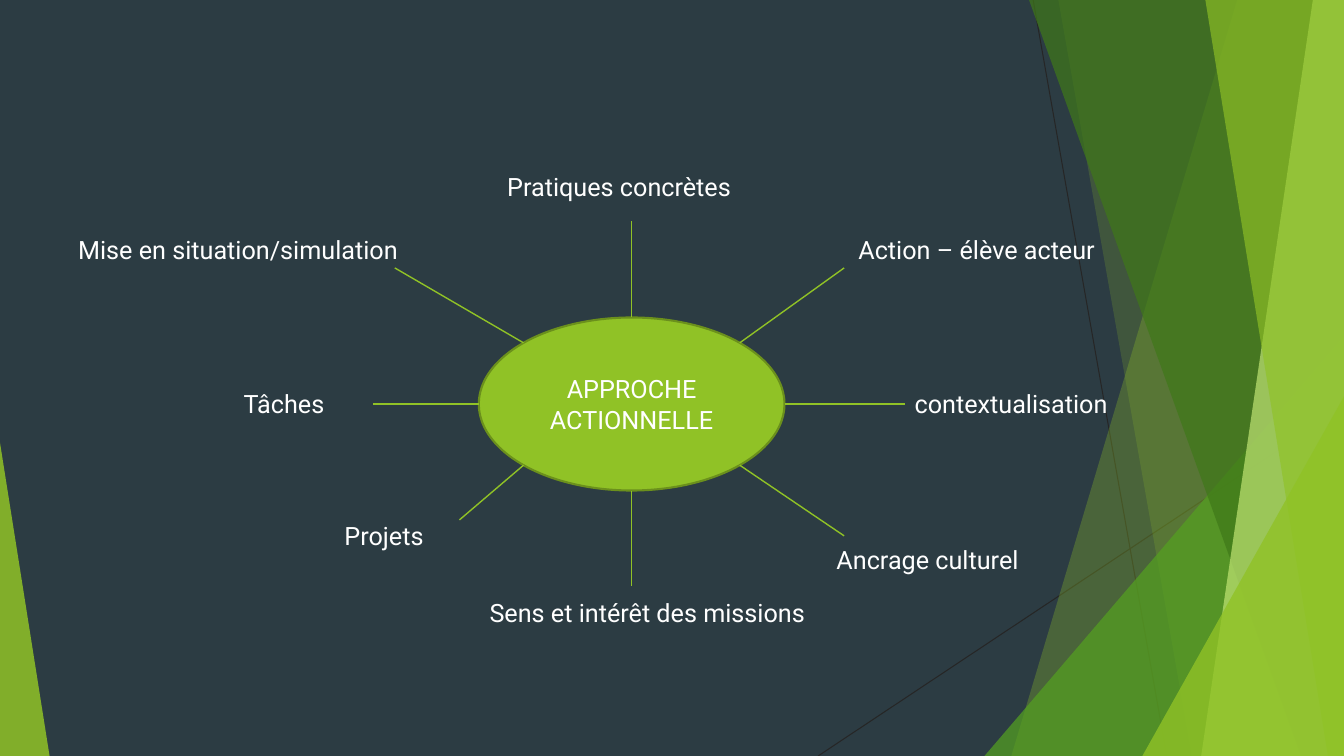
import math
from dataclasses import dataclass

import pptx
import pptx.util
import pptx.dml.color
import pptx.enum.shapes
import pptx.enum.text
import pptx.oxml
import pptx.oxml.ns

SHAPE = pptx.enum.shapes.MSO_SHAPE
COLS, ROWS = 16, 9
UNIT = pptx.util.Inches(13.333) / COLS


@dataclass(frozen=True)
class Theme:
    """Colours, font and sizes in points."""
    back: str = "2C3C43"
    ink: str = "FFFFFF"
    lime: str = "90C226"
    rim: str = "6B901C"
    leaf: str = "54A021"
    moss: str = "3F7819"
    pale: str = "C0E474"
    hair: str = "262626"
    font: str = "Roboto"
    size: float = 18
    thin: float = 0.75
    spoke: float = 1
    edge: float = 1.5


@dataclass(frozen=True)
class Box:
    """A region of the slide in columns and rows."""
    left: float
    top: float
    width: float
    height: float

    def spot(self, x, y):
        """Turn a point of the region into slide lengths."""
        return cells(self.left + x), cells(self.top + y)


THEME = Theme()

FACETS = [
    ("blade", 3.01, 0.32, THEME.lime, 30),
    ("blade", 0.88, 2.47, THEME.lime, 20),
    ("wedge", 0, 4, THEME.leaf, 72),
    ("blade", 0.53, 3.77, THEME.moss, 70),
    ("blade", 3.91, 2.58, THEME.pale, 70),
    ("blade", 2.63, 4.09, THEME.lime, 65),
    ("wedge", 1.88, 4.72, THEME.lime, 80),
]

TIPS = [(3.25, 0), (2.53, 1.57), (0, 2.17), (-2.05, 1.38),
        (-3.08, 0), (-2.82, -1.62), (0, -2.18), (2.53, -1.62)]

LABELS = [
    ("Pratiques concrètes", -1.6, -2.83, 3.22, 0),
    ("Action – élève acteur", 2.58, -2.08, 3.47, 0),
    ("Mise en situation/simulation", -7.08, -2.08, 4.86, 0.37),
    ("contextualisation", 3.25, -0.24, 3.42, 0),
    ("Ancrage culturel", 2.32, 1.61, 2.65, 0),
    ("Tâches", -5.7, -0.24, 2.39, 0.96),
    ("Projets", -4.64, 1.33, 2.63, 1.1),
    ("Sens et intérêt des missions", -1.81, 2.24, 4.85, 0),
]


def cells(count):
    """Turn grid cells into a slide length."""
    return pptx.util.Emu(round(count * UNIT))


def tone(code):
    """Make a colour from its code."""
    return pptx.dml.color.RGBColor.from_string(code)


def paint(shape, code, alpha=100):
    """Fill a shape without a line or shadow."""
    shape.shadow.inherit = False
    shape.fill.solid()
    shape.fill.fore_color.rgb = tone(code)
    shape.line.fill.background()
    if alpha < 100:
        tint = shape.fill._xPr.find(".//" + pptx.oxml.ns.qn("a:srgbClr"))
        node = pptx.oxml.parse_xml(
            f'<a:alpha {pptx.oxml.ns.nsdecls("a")} val="{alpha * 1000}"/>')
        tint.append(node)


def write(shape, text):
    """Put text into a shape in the theme's type."""
    frame = shape.text_frame
    frame.word_wrap = True
    frame.text = text
    font = frame.paragraphs[0].runs[0].font
    font.name = THEME.font
    font.size = pptx.util.Pt(THEME.size)
    font.color.rgb = tone(THEME.ink)
    return frame


def rule(slide, start, end, code, weight):
    """Draw a straight line between two points."""
    line = slide.shapes.add_connector(
        pptx.enum.shapes.MSO_CONNECTOR.STRAIGHT, *start, *end)
    line.line.color.rgb = tone(code)
    line.line.width = pptx.util.Pt(weight)
    line._element.spPr.append(pptx.oxml.parse_xml(
        f'<a:effectLst {pptx.oxml.ns.nsdecls("a")}/>'))


def blade(slide, box, head, foot):
    """Build a slanted panel that meets the right edge."""
    path = slide.shapes.build_freeform(*box.spot(head, 0), scale=1.0)
    path.add_line_segments([
        box.spot(box.width, 0), box.spot(box.width, box.height),
        box.spot(foot, box.height)], close=True)
    return path.convert_to_shape()


def wedge(slide, box, left, top, peak):
    """Add a triangle that fills the box's lower right part."""
    shape = slide.shapes.add_shape(
        SHAPE.ISOSCELES_TRIANGLE, *box.spot(left, top),
        cells(box.width - left), cells(box.height - top))
    shape.adjustments[0] = peak
    return shape


def decor(slide, box):
    """Draw the thin lines and facets of the right side."""
    for start, end in [((0.58, 0), (2.17, box.height)),
                       ((box.width, 4.84), (-1.98, box.height))]:
        rule(slide, box.spot(*start), box.spot(*end), THEME.hair, THEME.thin)
    for kind, one, two, code, alpha in FACETS:
        if kind == "blade":
            shape = blade(slide, box, one, two)
        else:
            shape = wedge(slide, box, one, two, 1)
        paint(shape, code, alpha)


def corner(slide, box):
    """Draw the facet at the lower left."""
    paint(wedge(slide, box, 0, 0, 0), THEME.lime, 85)


def hub(slide, box):
    """Draw the central oval, its spokes and their labels."""
    oval = slide.shapes.add_shape(
        SHAPE.OVAL, *box.spot(0, 0), cells(box.width), cells(box.height))
    paint(oval, THEME.lime)
    oval.line.color.rgb = tone(THEME.rim)
    oval.line.width = pptx.util.Pt(THEME.edge)
    frame = write(oval, "APPROCHE ACTIONNELLE")
    frame.vertical_anchor = pptx.enum.text.MSO_ANCHOR.MIDDLE
    frame.paragraphs[0].alignment = pptx.enum.text.PP_ALIGN.CENTER

    midx, midy = box.width / 2, box.height / 2
    for step, (x, y) in enumerate(TIPS):
        turn = step * math.tau / len(TIPS)
        start = box.spot(midx + midx * math.cos(turn),
                         midy + midy * math.sin(turn))
        rule(slide, start, box.spot(midx + x, midy + y),
             THEME.lime, THEME.spoke)
    for text, x, y, width, inset in LABELS:
        label = slide.shapes.add_textbox(
            *box.spot(midx + x, midy + y), cells(width), cells(0.48))
        frame = write(label, text)
        frame.margin_left += cells(inset)
        frame.auto_size = pptx.enum.text.MSO_AUTO_SIZE.SHAPE_TO_FIT_TEXT


def main():
    """Build the slide and save it."""
    deck = pptx.Presentation()
    deck.slide_width, deck.slide_height = cells(COLS), cells(ROWS)
    slide = deck.slides.add_slide(deck.slide_layouts[6])
    slide.background.fill.solid()
    slide.background.fill.fore_color.rgb = tone(THEME.back)
    decor(slide, Box(11.72, 0, COLS - 11.72, ROWS))
    corner(slide, Box(0, 5.27, 0.59, ROWS - 5.27))
    hub(slide, Box(5.7, 3.78, 3.64, 2.06))
    deck.save("out.pptx")


if __name__ == "__main__":
    main()
